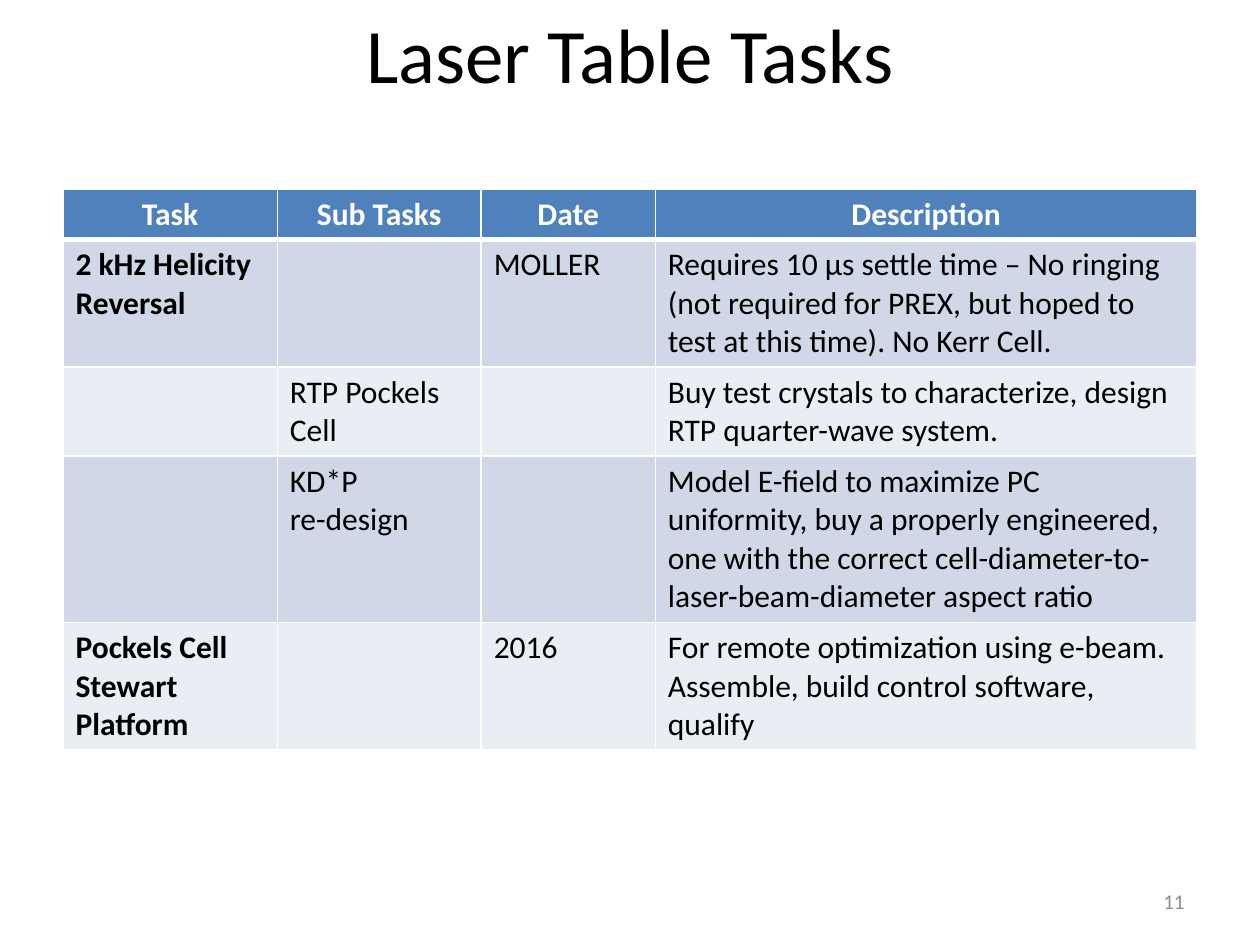
from lxml.etree import SubElement as Sub
from pptx import Presentation
from pptx.dml.color import RGBColor
from pptx.enum.text import MSO_ANCHOR as Anchor, PP_ALIGN as Align
from pptx.oxml.ns import qn
from pptx.util import Cm, Pt

BLACK = RGBColor(0x00, 0x00, 0x00)
WHITE = RGBColor(0xFF, 0xFF, 0xFF)
GREY = RGBColor(0x8C, 0x8C, 0x8C)
BLUE = RGBColor(0x4F, 0x81, 0xBD)
BANDS = RGBColor(0xD0, 0xD8, 0xE8), RGBColor(0xE9, 0xED, 0xF4)

BASE = {"name": "Calibri", "size": Pt(18), "bold": False}
COLS = 4.32, 4.11, 3.51, 10.92
ROWS = 0.99, 2.57, 1.8, 3.35, 2.57
TASKS = [
    ["Task", "Sub Tasks", "Date", "Description"],
    ["2 kHz Helicity Reversal", "", "MOLLER",
     "Requires 10 µs settle time – No ringing\n"
     "(not required for PREX, but hoped to test at this time). No Kerr Cell."],
    ["", "RTP Pockels Cell", "",
     "Buy test crystals to characterize, design RTP quarter-wave system."],
    ["", "KD*P\nre-design", "",
     "Model E-field to maximize PC uniformity, buy a properly engineered, "
     "one with the correct cell-diameter-to-laser-beam-diameter aspect ratio"],
    ["Pockels Cell Stewart Platform", "", "2016",
     "For remote optimization using e-beam.\n"
     "Assemble, build control software, qualify"],
]


def write(frame, text, color, align, **form):
    frame.text = text
    for para in frame.paragraphs:
        para.alignment = align
        for key, val in (BASE | form).items():
            setattr(para.font, key, val)
        para.font.color.rgb = color
        for run in para.runs:
            for key, val in (BASE | form).items():
                setattr(run.font, key, val)
            run.font.color.rgb = color


def add_text(slide, box, text, color, align, size):
    frame = slide.shapes.add_textbox(*map(Cm, box)).text_frame
    frame.word_wrap = True
    frame.vertical_anchor = Anchor.MIDDLE
    write(frame, text, color, align, size=Pt(size))


def set_edges(cell, widths):
    props = cell._tc.get_or_add_tcPr()
    # Borders come before the fill in the cell properties
    for spot, (side, width) in enumerate(widths.items()):
        line = Sub(props, qn(f"a:ln{side}"), w=str(Pt(width)))
        fill = Sub(line, qn("a:solidFill"))
        Sub(fill, qn("a:srgbClr"), val=str(WHITE))
        props.insert(spot, line)


def add_tasks(slide, left, top):
    table = slide.shapes.add_table(
        len(ROWS), len(COLS), Cm(left), Cm(top),
        Cm(sum(COLS)), Cm(sum(ROWS))).table
    for col, width in zip(table.columns, COLS):
        col.width = Cm(width)
    for row, height in zip(table.rows, ROWS):
        row.height = Cm(height)
    for r, texts in enumerate(TASKS):
        head = r == 0
        for c, text in enumerate(texts):
            cell = table.cell(r, c)
            cell.fill.solid()
            cell.fill.fore_color.rgb = BLUE if head else BANDS[(r - 1) % 2]
            write(cell.text_frame, text, WHITE if head else BLACK,
                  Align.CENTER if head else Align.LEFT, bold=head or c == 0)
            set_edges(cell, {"L": 1, "R": 1, "T": 3 if r == 1 else 1,
                             "B": 3 if head else 1})


def main():
    deck = Presentation()
    deck.slide_width, deck.slide_height = Cm(25.4), Cm(19.05)
    slide = deck.slides.add_slide(deck.slide_layouts[6])
    # Title
    add_text(slide, (1.27, 0, 22.86, 2.12), "Laser Table Tasks",
             BLACK, Align.CENTER, 44)
    # Task table
    add_tasks(slide, 1.27, 3.81)
    # Slide number
    add_text(slide, (18.2, 17.66, 5.93, 1.01), "11", GREY, Align.RIGHT, 12)
    deck.save("out.pptx")


if __name__ == "__main__":
    main()
